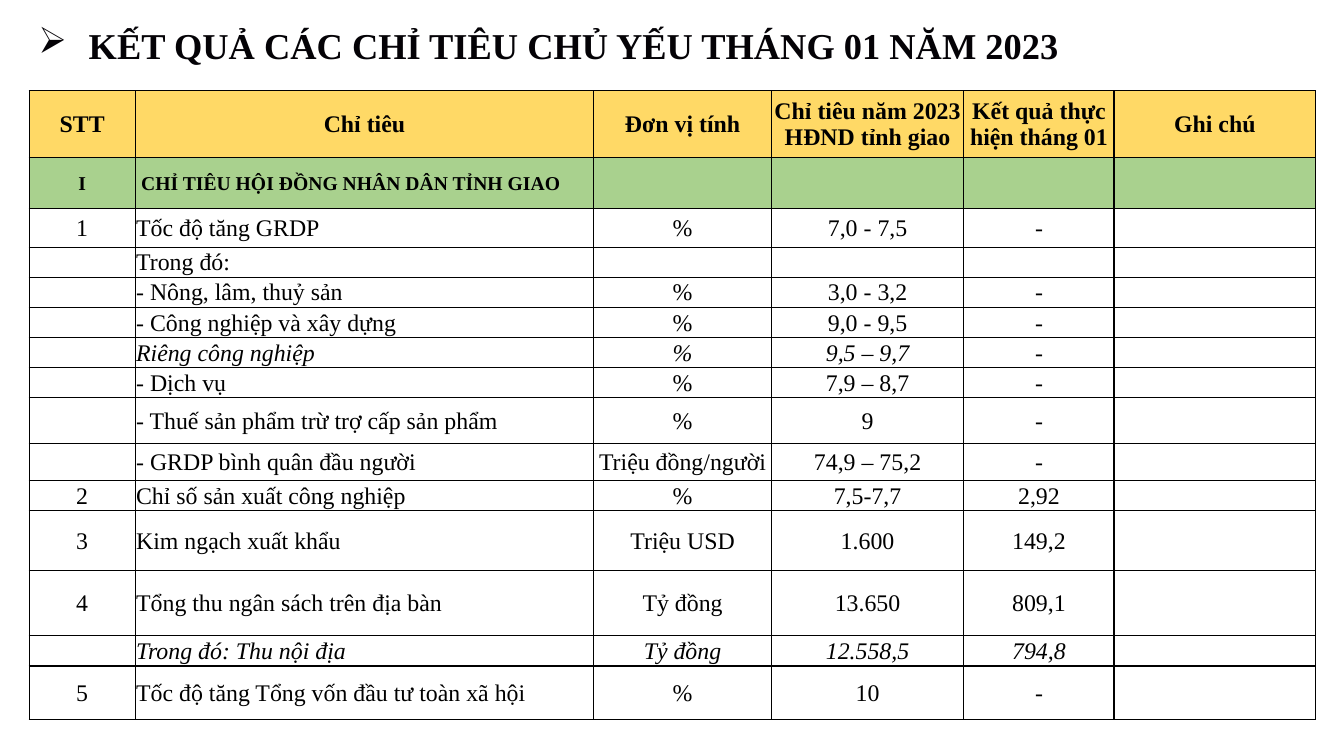
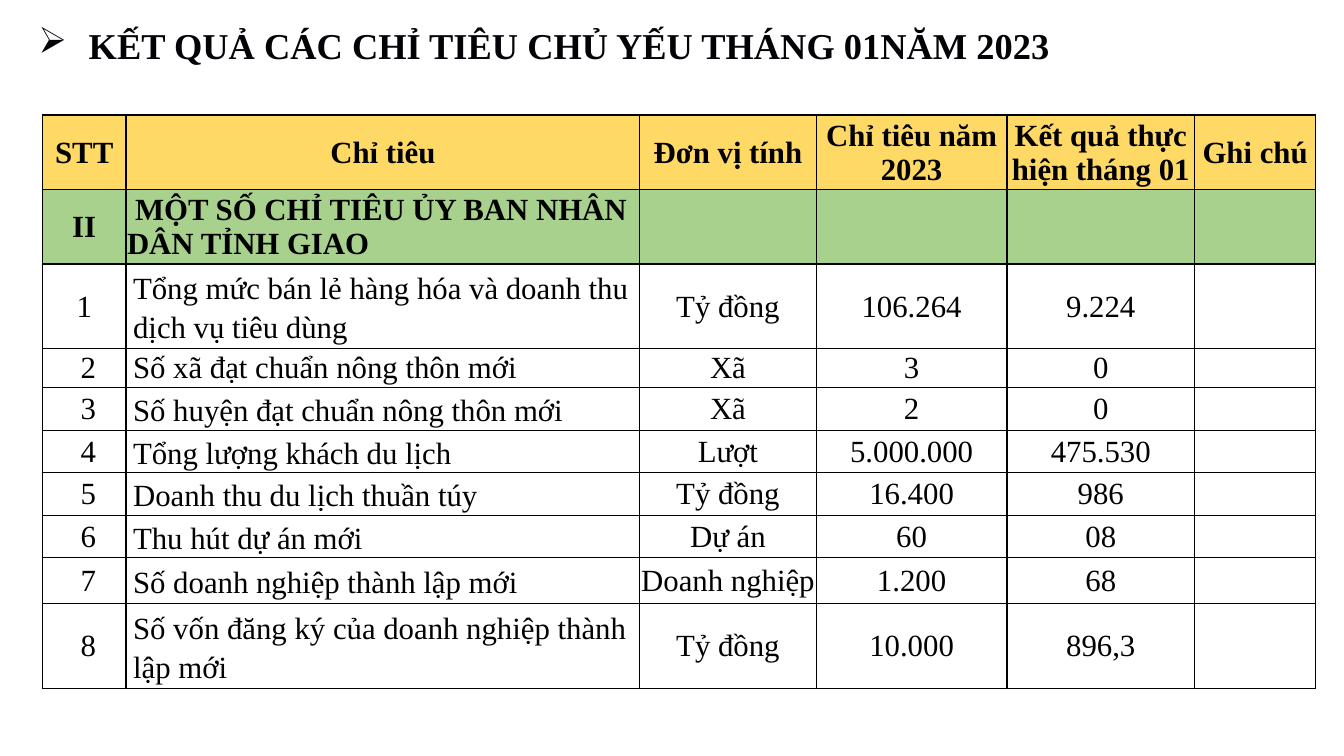
from lxml.etree import SubElement
from pptx import Presentation
from pptx.dml.color import RGBColor
from pptx.enum.text import MSO_ANCHOR, MSO_AUTO_SIZE, PP_ALIGN
from pptx.oxml.ns import qn
from pptx.util import Inches, Pt

FONT = "Times New Roman"
BLACK, TITLE_COLOR = "000000", "040206"
HEADER_FILL, SECTION_FILL, BODY_FILL = "FFD966", "A9D18E", "FFFFFF"
SLIDE_SIZE = (13.33, 7.5)
TITLE_BOX = (0.28, 0.18, 12.78, 0.54)
TITLE_INDENT = 0.5
CELL_MARGIN = 0.01
NAME_COLUMN = 1

PROVINCE_TABLE = {
    "box": (0.29, 0.9, 12.76, 6.18),
    "columns": (1.05, 4.55, 1.76, 1.91, 1.49, 2),
    "heights": (0.66, 0.51, 0.38, *[0.29] * 5, 0.45, 0.37, 0.29, 0.59, 0.65, 0.29, 0.53),
    "size": 17,
    "section_size": 14,
    "section_indent": 0.05,
    "italic_rows": (6, 13),
    "rows": [
        ("STT", "Chỉ tiêu", "Đơn vị tính", "Chỉ tiêu năm 2023 HĐND tỉnh giao",
         "Kết quả thực hiện tháng 01", "Ghi chú"),
        ("I", "CHỈ TIÊU HỘI ĐỒNG NHÂN DÂN TỈNH GIAO", "", "", "", ""),
        ("1", "Tốc độ tăng GRDP", "%", "7,0 - 7,5", "-", ""),
        ("", "Trong đó:", "", "", "", ""),
        ("", "- Nông, lâm, thuỷ sản", "%", "3,0 - 3,2", "-", ""),
        ("", "- Công nghiệp và xây dựng", "%", "9,0 - 9,5", "-", ""),
        ("", "Riêng công nghiệp", "%", "9,5 – 9,7", "-", ""),
        ("", "- Dịch vụ", "%", "7,9 – 8,7", "-", ""),
        ("", "- Thuế sản phẩm trừ trợ cấp sản phẩm", "%", "9", "-", ""),
        ("", "- GRDP bình quân đầu người", "Triệu đồng/người", "74,9 – 75,2", "-", ""),
        ("2", "Chỉ số sản xuất công nghiệp", "%", "7,5-7,7", "2,92", ""),
        ("3", "Kim ngạch xuất khẩu", "Triệu USD", "1.600", "149,2", ""),
        ("4", "Tổng thu ngân sách trên địa bàn", "Tỷ đồng", "13.650", "809,1", ""),
        ("", "Trong đó: Thu nội địa", "Tỷ đồng", "12.558,5", "794,8", ""),
        ("5", "Tốc độ tăng Tổng vốn đầu tư toàn xã hội", "%", "10", "-", ""),
    ],
}

COMMITTEE_TABLE = {
    "box": (0.42, 1.14, 12.63, 5.68),
    "columns": (0.83, 5.09, 1.75, 1.89, 1.86, 1.2),
    "heights": (0.74, 0.74, 0.84, 0.37, 0.43, 0.42, 0.42, 0.42, 0.46, 0.84),
    "size": 22,
    "section_size": 22,
    "section_indent": 0.08,
    "name_margin": 0.07,
    "number_shift": 0.08,
    "loose_rows": (2, 4, 5, 6, 7, 8, 9),
    "rows": [
        ("STT", "Chỉ tiêu", "Đơn vị tính", "Chỉ tiêu năm 2023",
         "Kết quả thực hiện tháng 01", "Ghi chú"),
        ("II", "MỘT SỐ CHỈ TIÊU ỦY BAN NHÂN DÂN TỈNH GIAO", "", "", "", ""),
        ("1", "Tổng mức bán lẻ hàng hóa và doanh thu dịch vụ tiêu dùng", "Tỷ đồng",
         "106.264", "9.224", ""),
        ("2", "Số xã đạt chuẩn nông thôn mới", "Xã", "3", "0", ""),
        ("3", "Số huyện đạt chuẩn nông thôn mới", "Xã", "2", "0", ""),
        ("4", "Tổng lượng khách du lịch", "Lượt", "5.000.000", "475.530", ""),
        ("5", "Doanh thu du lịch thuần túy", "Tỷ đồng", "16.400", "986", ""),
        ("6", "Thu hút dự án mới", "Dự án", "60", "08", ""),
        ("7", "Số doanh nghiệp thành lập mới", "Doanh nghiệp", "1.200", "68", ""),
        ("8", "Số vốn đăng ký của doanh nghiệp thành lập mới", "Tỷ đồng", "10.000", "896,3", ""),
    ],
}

SLIDES = [
    ("KẾT QUẢ CÁC CHỈ TIÊU CHỦ YẾU THÁNG 01 NĂM 2023", PROVINCE_TABLE),
    ("KẾT QUẢ CÁC CHỈ TIÊU CHỦ YẾU THÁNG 01NĂM 2023", COMMITTEE_TABLE),
]


def color(hex_string):
    """Turn a hex string into a colour."""
    return RGBColor.from_string(hex_string)


def write_text(frame, text, size, hex_color=BLACK, bold=False, italic=False,
               align=PP_ALIGN.LEFT, anchor=MSO_ANCHOR.MIDDLE, first_indent=0,
               line_spacing=None, space_after=None):
    """Write one formatted paragraph into a text frame and return it."""
    frame.word_wrap = True
    frame.vertical_anchor = anchor
    paragraph = frame.paragraphs[0]
    paragraph.alignment = align
    paragraph.line_spacing = line_spacing
    paragraph.space_after = space_after
    if first_indent:
        paragraph._p.get_or_add_pPr().set("indent", str(Inches(first_indent)))
    if not text:
        SubElement(paragraph._p, qn("a:endParaRPr"), sz=str(size * 100))
        return paragraph
    run = paragraph.add_run()
    run.text = text
    font = run.font
    font.name, font.size, font.bold, font.italic = FONT, Pt(size), bold, italic
    font.color.rgb = color(hex_color)
    return paragraph


def add_title(slide, text):
    """Place the bulleted slide title in the title placeholder."""
    title = slide.shapes.title
    title.left, title.top, title.width, title.height = map(Inches, TITLE_BOX)
    frame = title.text_frame
    frame.auto_size = MSO_AUTO_SIZE.NONE
    paragraph = write_text(frame, text, 26, hex_color=TITLE_COLOR, bold=True,
                           anchor=MSO_ANCHOR.TOP, first_indent=-TITLE_INDENT)
    properties = paragraph._p.get_or_add_pPr()
    properties.set("marL", str(Inches(TITLE_INDENT)))
    SubElement(properties, qn("a:buChar"), char="➢")


def style_cell(cell, fill):
    """Give a cell its borders, fill and narrow margins."""
    properties = cell._tc.get_or_add_tcPr()
    for side in ("lnL", "lnR", "lnT", "lnB"):
        line = SubElement(properties, qn(f"a:{side}"), w=str(Pt(1)))
        SubElement(SubElement(line, qn("a:solidFill")), qn("a:srgbClr"), val=BLACK)
    cell.fill.solid()
    cell.fill.fore_color.rgb = color(fill)
    cell.margin_left = cell.margin_right = cell.margin_top = Inches(CELL_MARGIN)
    cell.margin_bottom = 0


def fill_cell(cell, text, row, column, layout):
    """Style and write one cell according to its row and column."""
    style_cell(cell, {0: HEADER_FILL, 1: SECTION_FILL}.get(row, BODY_FILL))
    is_name = column == NAME_COLUMN and row > 0
    is_loose = is_name and row in layout.get("loose_rows", ())
    if is_name and row > 1 and "name_margin" in layout:
        cell.margin_left = cell.margin_right = Inches(layout["name_margin"])
    if column == 0 and row > 2:
        cell.margin_left = Inches(CELL_MARGIN + layout.get("number_shift", 0))
    if is_loose:
        cell.margin_top = 0
    write_text(
        cell.text_frame, text,
        layout["section_size"] if row == 1 else layout["size"],
        bold=row < 2,
        italic=row in layout.get("italic_rows", ()),
        align=PP_ALIGN.LEFT if is_name else PP_ALIGN.CENTER,
        first_indent=layout["section_indent"] if is_name and row == 1 else 0,
        line_spacing=1.15 if is_loose else None,
        space_after=Pt(10) if is_loose else None,
    )
    cell.vertical_anchor = MSO_ANCHOR.MIDDLE


def add_indicator_table(slide, layout):
    """Add a table whose columns and rows share out the given box."""
    rows, columns, heights = layout["rows"], layout["columns"], layout["heights"]
    left, top, width, height = map(Inches, layout["box"])
    table = slide.shapes.add_table(len(rows), len(columns), left, top, width, height).table
    table.first_row = table.horz_banding = False
    for table_column, share in zip(table.columns, columns):
        table_column.width = round(width * share / sum(columns))
    for table_row, share in zip(table.rows, heights):
        table_row.height = round(height * share / sum(heights))
    for row, texts in enumerate(rows):
        for column, text in enumerate(texts):
            fill_cell(table.cell(row, column), text, row, column, layout)


def main():
    """Build and save the presentation."""
    presentation = Presentation()
    presentation.slide_width, presentation.slide_height = map(Inches, SLIDE_SIZE)
    title_only = presentation.slide_layouts[5]
    for title, layout in SLIDES:
        slide = presentation.slides.add_slide(title_only)
        add_title(slide, title)
        add_indicator_table(slide, layout)
    presentation.save("out.pptx")


if __name__ == "__main__":
    main()
